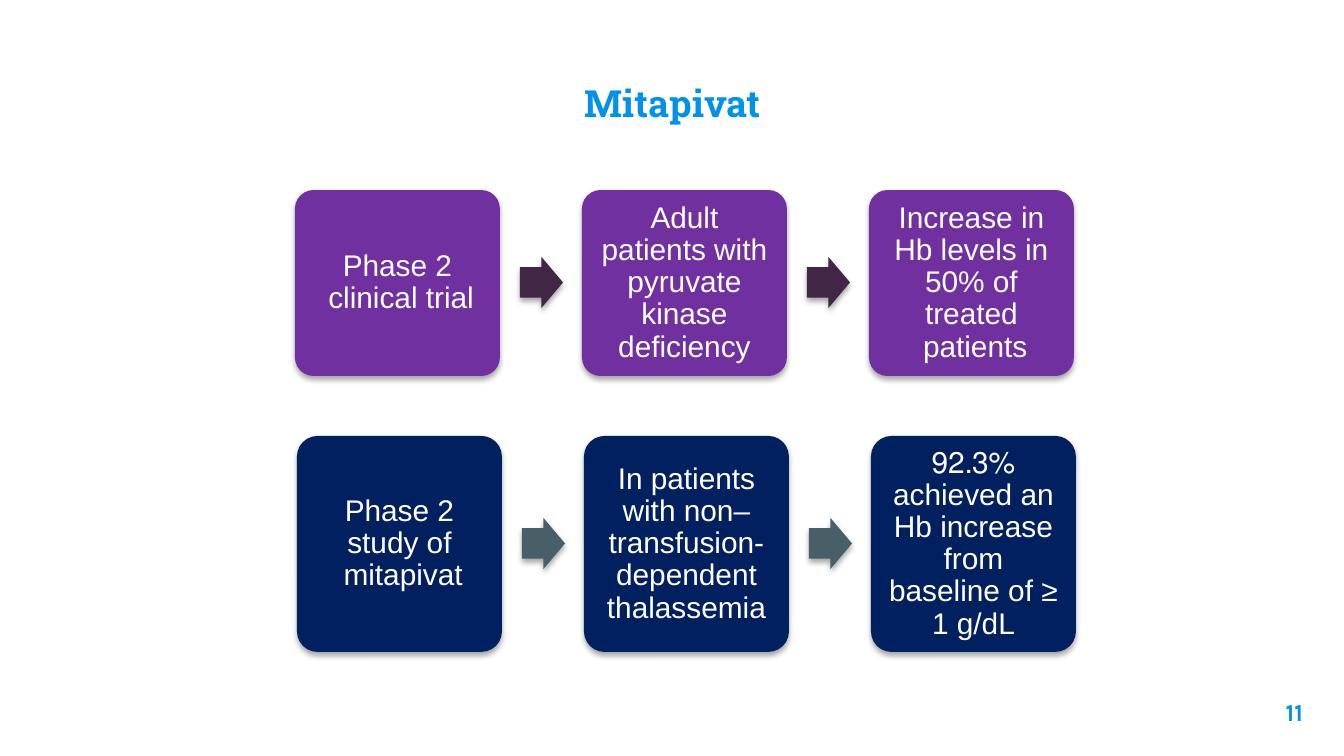
from lxml import etree
from pptx import Presentation
from pptx.dml.color import RGBColor
from pptx.enum.shapes import MSO_SHAPE
from pptx.enum.text import MSO_ANCHOR, MSO_AUTO_SIZE, PP_ALIGN
from pptx.oxml.ns import qn
from pptx.util import Pt

EMU_PER_PX = 9144000 / 1344
COLOURS = {
    "accent": "0091EA",
    "text": "FFFFFF",
    "shadow": "000000",
    "trial": "7030A0",
    "trial_arrow": "412646",
    "study": "002060",
    "study_arrow": "485E68",
}
STEP_WIDTH, STEP_GAP, STEP_INSET = 205, 82, 9
ARROW_OFFSET, ARROW_WIDTH, ARROW_HEIGHT = 225, 43, 51


def px(*lengths):
    return [round(length * EMU_PER_PX) for length in lengths]


def write_text(shape, text, font_name, size, colour, alignment, anchor, inset, bold=False):
    frame = shape.text_frame
    frame.word_wrap = True
    frame.auto_size = MSO_AUTO_SIZE.NONE
    frame.vertical_anchor = anchor
    (frame.margin_left, frame.margin_top,
     frame.margin_right, frame.margin_bottom) = px(*[inset] * 4)
    paragraph = frame.paragraphs[0]
    paragraph.alignment = alignment
    run = paragraph.add_run()
    run.text = text
    run.font.name = font_name
    run.font.size = Pt(size)
    run.font.bold = bold
    run.font.color.rgb = RGBColor.from_string(COLOURS[colour])
    return paragraph


def add_soft_shadow(shape):
    shape.shadow.inherit = False
    effects = shape._element.spPr.find(qn("a:effectLst"))
    shadow = etree.SubElement(effects, qn("a:outerShdw"), blurRad="40000",
                              dist="23000", dir="5400000", rotWithShape="0")
    colour = etree.SubElement(shadow, qn("a:srgbClr"), val=COLOURS["shadow"])
    etree.SubElement(colour, qn("a:alpha"), val="35000")


def add_filled_shape(slide, kind, box, colour, adjustments):
    shape = slide.shapes.add_shape(kind, *px(*box))
    for index, value in enumerate(adjustments):
        shape.adjustments[index] = value
    shape.fill.solid()
    shape.fill.fore_color.rgb = RGBColor.from_string(COLOURS[colour])
    shape.line.fill.background()
    add_soft_shadow(shape)
    return shape


def add_title(slide, box, text):
    title = slide.shapes.title
    title.left, title.top, title.width, title.height = px(*box)
    write_text(title, text, "Roboto Slab", 20, "accent",
               PP_ALIGN.CENTER, MSO_ANCHOR.BOTTOM, 13, bold=True)


def add_page_number(slide, box, number):
    write_text(slide.shapes.add_textbox(*px(*box)), number, "Karla", 13, "accent",
               PP_ALIGN.RIGHT, MSO_ANCHOR.TOP, 13, bold=True)


def add_process_row(slide, box, steps, colour):
    """Place rounded steps from left to right with an arrow between neighbours."""
    left, top, height = box
    for index, text in enumerate(steps):
        step_left = left + index * (STEP_WIDTH + STEP_GAP)
        step = add_filled_shape(slide, MSO_SHAPE.ROUNDED_RECTANGLE,
                                (step_left, top, STEP_WIDTH, height), colour, [0.1])
        paragraph = write_text(step, text, "Arial", 16, "text",
                               PP_ALIGN.CENTER, MSO_ANCHOR.MIDDLE, STEP_INSET)
        paragraph.line_spacing = 0.9
        paragraph._p.get_or_add_pPr().set("rtl", "1")
        if index < len(steps) - 1:
            arrow_top = top + (height - ARROW_HEIGHT) // 2
            add_filled_shape(slide, MSO_SHAPE.RIGHT_ARROW,
                             (step_left + ARROW_OFFSET, arrow_top, ARROW_WIDTH, ARROW_HEIGHT),
                             f"{colour}_arrow", [0.6, 0.5])


def main():
    presentation = Presentation()
    presentation.slide_width, presentation.slide_height = px(1344, 756)
    slide = presentation.slides.add_slide(presentation.slide_layouts[5])
    add_title(slide, (116, 35, 1113, 103), "Mitapivat")
    add_page_number(slide, (1235, 684, 81, 58), "11")
    add_process_row(slide, (295, 190, 186), [
        "Phase 2 clinical trial ",
        "Adult patients with pyruvate kinase deficiency",
        "Increase in Hb levels in 50% of treated patients ",
    ], "trial")
    add_process_row(slide, (297, 436, 216), [
        "Phase 2 study of mitapivat ",
        "In patients with non–transfusion-dependent thalassemia",
        "92.3% achieved an Hb increase from baseline of ≥ 1 g/dL",
    ], "study")
    presentation.save("out.pptx")


if __name__ == "__main__":
    main()
